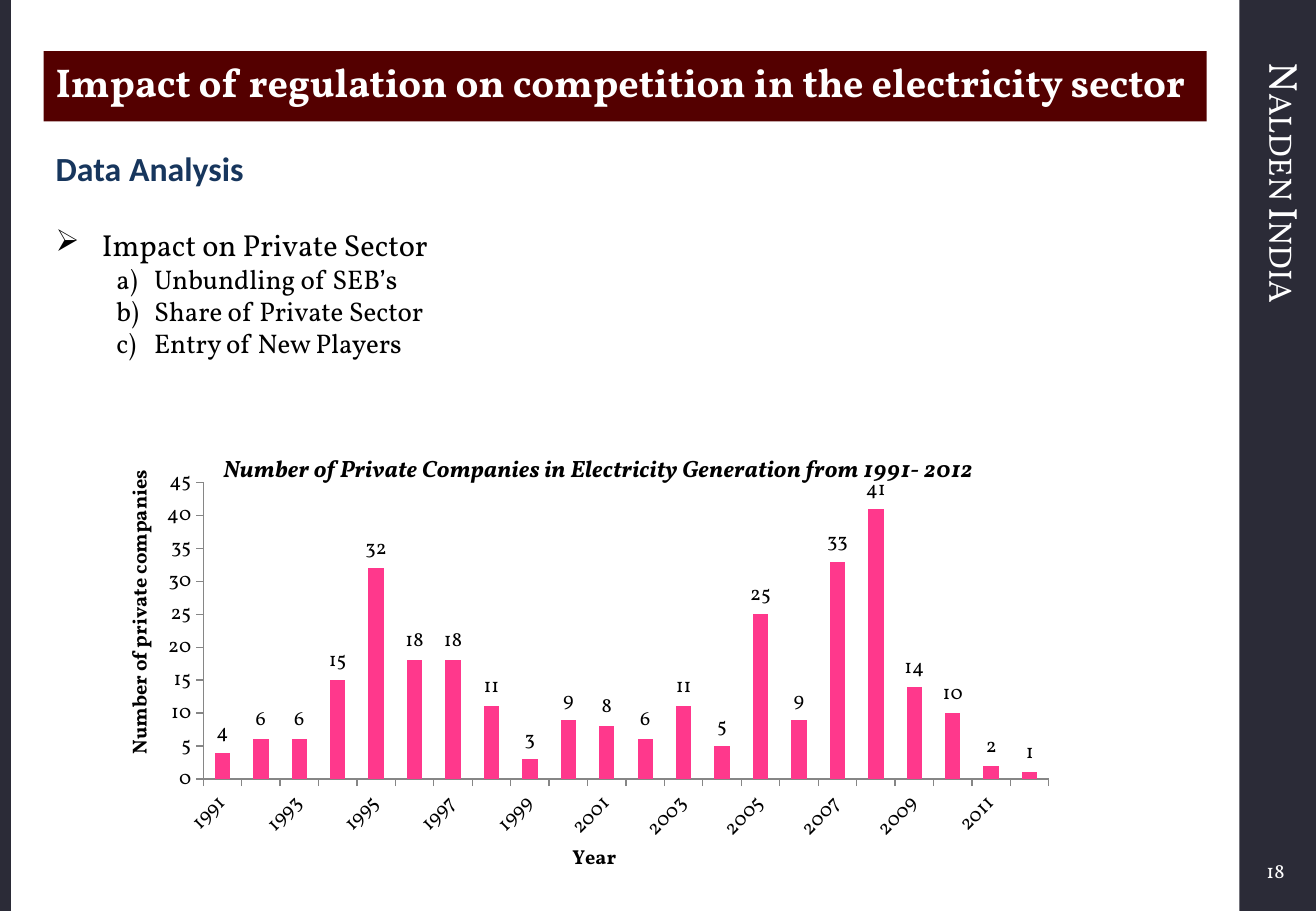
from lxml import etree
from pptx import Presentation
from pptx.chart.data import CategoryChartData
from pptx.dml.color import RGBColor
from pptx.enum import chart as ch, shapes, text
from pptx.oxml import ns
from pptx.util import Inches, Pt

# Content
TITLE = "Impact of regulation on competition in the electricity sector"
FIRM = "Nalden India"
PAGE = "18"
HEADING = "Data Analysis"
TOPIC = "Impact on Private Sector"
POINTS = ["Unbundling of SEB’s", "Share of Private Sector", "Entry of New Players"]
CHART_TITLE = "Number of Private Companies in Electricity Generation from 1991- 2012"
X_TITLE, Y_TITLE = "Year", "Number of private companies"
FIRST_YEAR = 1991
COMPANIES = [4, 6, 6, 15, 32, 18, 18, 11, 3, 9, 8,
             6, 11, 5, 25, 9, 33, 41, 14, 10, 2, 1]

# Format
SERIF, SANS = "Vollkorn", "Calibri"
WHITE, BLACK = RGBColor(255, 255, 255), RGBColor(0, 0, 0)
SLATE = RGBColor(0x2B, 0x2B, 0x37)
MAROON = RGBColor(0x54, 0x00, 0x00)
NAVY = RGBColor(0x17, 0x36, 0x5D)
PINK = RGBColor(0xFF, 0x38, 0x8C)
GREY = RGBColor(0x86, 0x86, 0x86)
W, H = 10.83, 7.5
SIDE_W, EDGE_W = 0.63, 0.09
LEFT, BODY_W = 0.36, 9.57

prs = Presentation()
prs.slide_width, prs.slide_height = Inches(W), Inches(H)
s = prs.slides.add_slide(prs.slide_layouts[6])


def style(font, size, color=BLACK, bold=False, italic=False, name=SERIF):
    font.size, font.name = Pt(size), name
    font.bold, font.italic = bold, italic
    font.color.rgb = color


def write(tf, words, size=12, color=BLACK, bold=False, italic=False, name=SERIF,
          align=None, before=0, bullet=None, margin=0, hang=0):
    """Fill the first paragraph, or add one when it is taken."""
    p = tf.paragraphs[0]
    if p.runs:
        p = tf.add_paragraph()
        p.space_before = Pt(before)
    if bullet:
        tag, key, value = bullet
        pPr = p._p.get_or_add_pPr()
        pPr.set("marL", str(Inches(margin)))
        pPr.set("indent", str(-Inches(hang)))
        etree.SubElement(pPr, ns.qn(tag)).set(key, value)
    if align is not None:
        p.alignment = align
    r = p.add_run()
    r.text = words
    style(r.font, size, color, bold, italic, name)
    return r


def bar(x, y, w, h, color):
    sp = s.shapes.add_shape(shapes.MSO_SHAPE.RECTANGLE, *map(Inches, (x, y, w, h)))
    sp.shadow.inherit = False
    sp.fill.solid()
    sp.fill.fore_color.rgb = color
    sp.line.fill.background()
    return sp


def box(x, y, w, h):
    tf = s.shapes.add_textbox(*map(Inches, (x, y, w, h))).text_frame
    tf.word_wrap = True
    return tf


def place_title(title, words, x, y, **fmt):
    """Write a chart or axis title at a fraction of the chart area."""
    write(title.text_frame, words, bold=True, **fmt)
    el = title._element
    for old in el.findall(ns.qn("c:layout")):
        el.remove(old)
    el.find(ns.qn("c:tx")).addnext(layout(x=x, y=y))


def layout(target=None, **fractions):
    node = etree.Element(ns.qn("c:layout"))
    manual = etree.SubElement(node, ns.qn("c:manualLayout"))
    if target:
        etree.SubElement(manual, ns.qn("c:layoutTarget")).set("val", target)
    for mode in ("xMode", "yMode"):
        etree.SubElement(manual, ns.qn("c:" + mode)).set("val", "edge")
    for key, value in fractions.items():
        etree.SubElement(manual, ns.qn("c:" + key)).set("val", str(value))
    return node


# Side bands with firm name and page number
bar(W - SIDE_W, 0, SIDE_W, H, SLATE)
bar(0, 0, EDGE_W, H, SLATE)
tf = box(W - SIDE_W, 0.42, SIDE_W, 6.42)
tf._txBody.bodyPr.set("vert", "vert")
firm = write(tf, FIRM, size=24, color=WHITE)
firm.font._element.set("cap", "small")
tf = box(9.5, 7, 1.17, 0.33)
tf.vertical_anchor = text.MSO_ANCHOR.MIDDLE
write(tf, PAGE, color=WHITE, align=text.PP_ALIGN.RIGHT)

# Title banner
tf = bar(LEFT, 0.42, BODY_W, 0.58, MAROON).text_frame
tf.word_wrap = True
tf.vertical_anchor = text.MSO_ANCHOR.TOP
write(tf, TITLE, size=23.8, color=WHITE, bold=True, align=text.PP_ALIGN.LEFT)

# Outline
tf = box(LEFT, 1.17, BODY_W, 2.17)
write(tf, HEADING, size=20, color=NAVY, bold=True, name=SANS)
write(tf, TOPIC, size=18, before=22, bullet=("a:buChar", "char", "➢"),
      margin=0.38, hang=0.38)
for point in POINTS:
    write(tf, point, size=16, bullet=("a:buAutoNum", "type", "alphaLcParenR"),
          margin=0.81, hang=0.31)

# Column chart
data = CategoryChartData()
data.categories = [str(FIRST_YEAR + i) for i in range(len(COMPANIES))]
data.add_series("Series 1", COMPANIES)
chart = s.shapes.add_chart(ch.XL_CHART_TYPE.COLUMN_CLUSTERED,
                           *map(Inches, (0.92, 3.5, 8, 3.75)), data).chart
style(chart.font, 12)
chart.has_legend = False
place_title(chart.chart_title, CHART_TITLE, 0.11, 0.05, size=14, italic=True)
chart.chart_title.include_in_layout = False

area = chart._chartSpace.chart.plotArea
for old in area.findall(ns.qn("c:layout")):
    area.remove(old)
area.insert(0, layout("inner", x=0.094, y=0.126, w=0.87, h=0.651))

plot = chart.plots[0]
plot.gap_width = 150
plot.vary_by_categories = False
fill = plot.series[0].format.fill
fill.solid()
fill.fore_color.rgb = PINK
plot.has_data_labels = True
labels = plot.data_labels
labels.show_value = True
labels.position = ch.XL_LABEL_POSITION.OUTSIDE_END
style(labels.font, 12)

# Axes
years, counts = chart.category_axis, chart.value_axis
for axis, words, x, y in ((years, X_TITLE, 0.47, 0.91), (counts, Y_TITLE, 0.01, 0.09)):
    axis.has_major_gridlines = False
    axis.major_tick_mark = ch.XL_TICK_MARK.OUTSIDE
    axis.minor_tick_mark = ch.XL_TICK_MARK.NONE
    axis.format.line.color.rgb = GREY
    axis.format.line.width = Pt(0.75)
    style(axis.tick_labels.font, 12)
    place_title(axis.axis_title, words, x, y)
counts.minimum_scale, counts.maximum_scale, counts.major_unit = 0, 45, 5
counts.axis_title.text_frame._txBody.bodyPr.set("rot", "-5400000")
counts.axis_title.text_frame._txBody.bodyPr.set("vert", "horz")

# Slanted labels, every second year
ax = years._element
ax.find(ns.qn("c:txPr")).find(ns.qn("a:bodyPr")).set("rot", "-2700000")
no_multi = ax.find(ns.qn("c:noMultiLvlLbl"))
for tag, step in (("c:tickLblSkip", "2"), ("c:tickMarkSkip", "1")):
    skip = etree.Element(ns.qn(tag))
    skip.set("val", step)
    no_multi.addprevious(skip)

prs.save("out.pptx")
